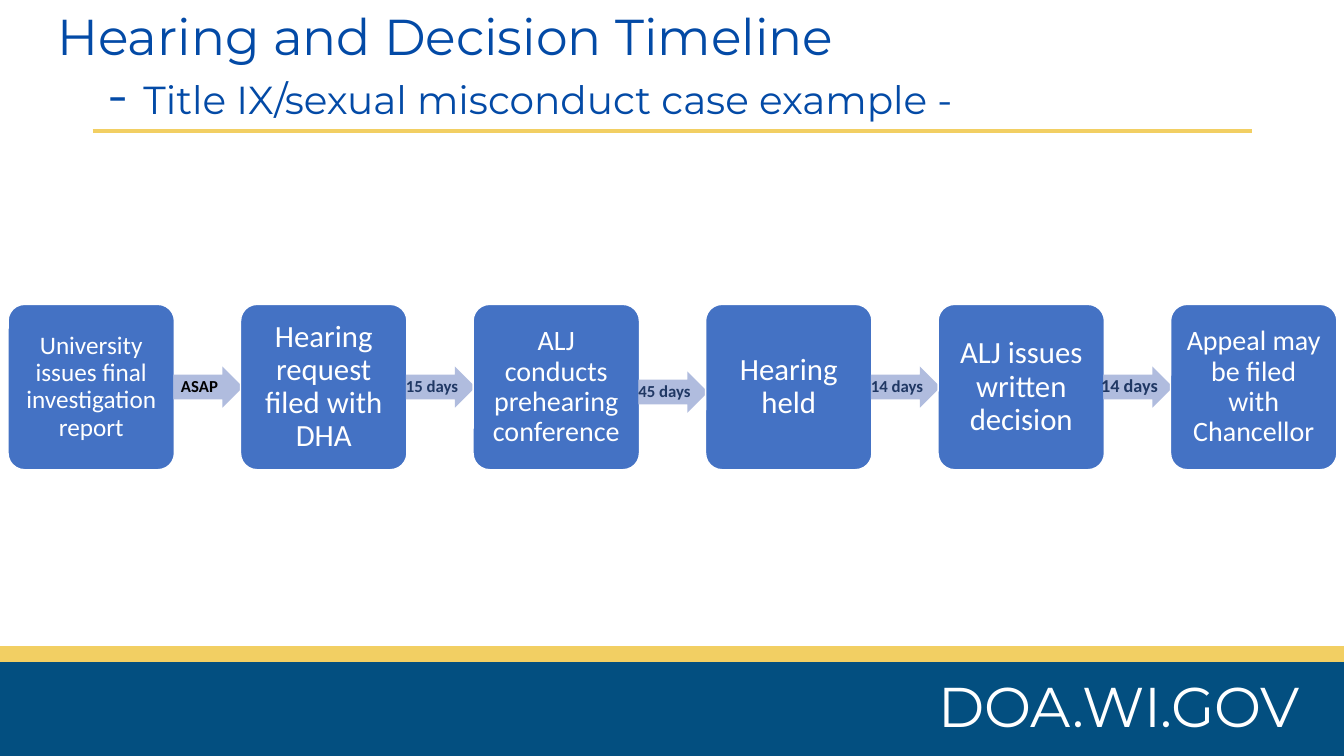
from pptx import Presentation
from pptx.dml.color import RGBColor
from pptx.enum.shapes import MSO_CONNECTOR, MSO_SHAPE
from pptx.enum.text import MSO_ANCHOR, PP_ALIGN
from pptx.oxml.ns import qn
from pptx.util import Inches, Pt
from lxml import etree

RECT, ROUND, ARROW = MSO_SHAPE.RECTANGLE, MSO_SHAPE.ROUNDED_RECTANGLE, MSO_SHAPE.RIGHT_ARROW
STRAIGHT = MSO_CONNECTOR.STRAIGHT
TOP, MIDDLE = MSO_ANCHOR.TOP, MSO_ANCHOR.MIDDLE
LEFT, CENTER, RIGHT = PP_ALIGN.LEFT, PP_ALIGN.CENTER, PP_ALIGN.RIGHT

THEME = {
    "head": "Montserrat", "body": "Calibri",
    "title": "034AA6", "gold": "F2CF63", "navy": "034F80", "box": "4472C4",
    "arrow": "B0BCDE", "label": "203864", "white": "FFFFFF", "black": "000000",
    "title_pt": 36, "dash_pt": 39.6, "sub_pt": 27.9, "site_pt": 40,
    "large": 22, "mid": 20, "small": 18, "tag": 12, "tag_big": 13,
}
WIDTH, HEIGHT = 13.33, 7.5


def write(shape, text, size, color, font="body", bold=False, align=CENTER,
          anchor=MIDDLE, space=0.9, inset=(0.1, 0.05, 0.1, 0.05), wrap=True):
    """Append text to the shape's first paragraph."""
    frame = shape.text_frame
    frame.word_wrap, frame.vertical_anchor = wrap, anchor
    (frame.margin_left, frame.margin_top,
     frame.margin_right, frame.margin_bottom) = map(Inches, inset)
    line = frame.paragraphs[0]
    line.alignment, line.line_spacing = align, space
    run = line.add_run()
    run.text = text
    run.font.name, run.font.size, run.font.bold = THEME[font], Pt(THEME[size]), bold
    run.font.color.rgb = RGBColor.from_string(THEME[color])
    return line


def draw(kind, left, top, width, height, fill, edge=None):
    shape = slide.shapes.add_shape(kind, *map(Inches, (left, top, width, height)))
    shape.shadow.inherit = False
    shape.fill.solid()
    shape.fill.fore_color.rgb = RGBColor.from_string(THEME[fill])
    if edge:
        shape.line.color.rgb = RGBColor.from_string(THEME[edge])
        shape.line.width = Pt(1)
    else:
        shape.line.fill.background()
    return shape


deck = Presentation()
deck.slide_width, deck.slide_height = Inches(WIDTH), Inches(HEIGHT)
slide = deck.slides.add_slide(deck.slide_layouts[6])

# Rule and footer
rule = slide.shapes.add_connector(STRAIGHT, *map(Inches, (0.92, 1.3, 12.42, 1.3)))
rule.line.color.rgb = RGBColor.from_string(THEME["gold"])
rule.line.width = Pt(3)
etree.SubElement(rule.element.spPr, qn("a:effectLst"))

for top, fill in ((6.41, "gold"), (6.57, "navy")):
    draw(RECT, 0, top, WIDTH, HEIGHT - top, fill)
site = slide.shapes.add_textbox(*map(Inches, (3.15, 6.61, 9.84, 0.77)))
write(site, "DOA.WI.GOV", "site_pt", "white", "head", align=RIGHT, anchor=TOP, space=1.0)

# Title
title = slide.shapes.add_textbox(*map(Inches, (0.47, 0.09, 11.52, 1.19)))
look = {"color": "title", "font": "head", "align": LEFT}
write(title, "Hearing and Decision Timeline", "title_pt", **look).add_line_break()
write(title, "\t- ", "dash_pt", **look)
write(title, "Title IX/sexual misconduct case example -", "sub_pt", **look)

# Timeline: step, size, inset, then the arrow's label, size, colour and drop
STEPS = [
    ("University issues final investigation report", "small", 0.07, "ASAP", "tag", "black", 0),
    ("Hearing request filed with DHA", "large", 0.09, "15 days", "tag", "label", 0),
    ("ALJ conducts prehearing conference", "mid", 0.08, "45 days", "tag", "label", 0.05),
    ("Hearing held", "large", 0.09, "14 days", "tag", "label", 0),
    ("ALJ issues written decision", "large", 0.09, "14 days", "tag_big", "label", 0),
    ("Appeal may be filed with Chancellor", "mid", 0.08, None, None, None, 0),
]
START, PITCH, BOX_TOP, BOX_W, BOX_H = 0.08, 2.306, 3.02, 1.65, 1.64
ARROW_W, ARROW_H = 0.69, 0.41

for step, (text, size, pad, label, tag, color, drop) in enumerate(STEPS):
    left = START + step * PITCH
    box = draw(ROUND, left, BOX_TOP, BOX_W, BOX_H, "box", "white")
    box.adjustments[0] = 0.1
    write(box, text, size, "white", inset=(pad,) * 4)
    if label:
        top = BOX_TOP + (BOX_H - ARROW_H) / 2 + drop
        arrow = draw(ARROW, left + BOX_W - 0.01, top, ARROW_W, ARROW_H, "arrow")
        arrow.adjustments[0], arrow.adjustments[1] = 0.6, 0.5
        write(arrow, label, tag, color, bold=True, inset=(0, 0, 0.05, 0), wrap=False)

deck.save("out.pptx")
